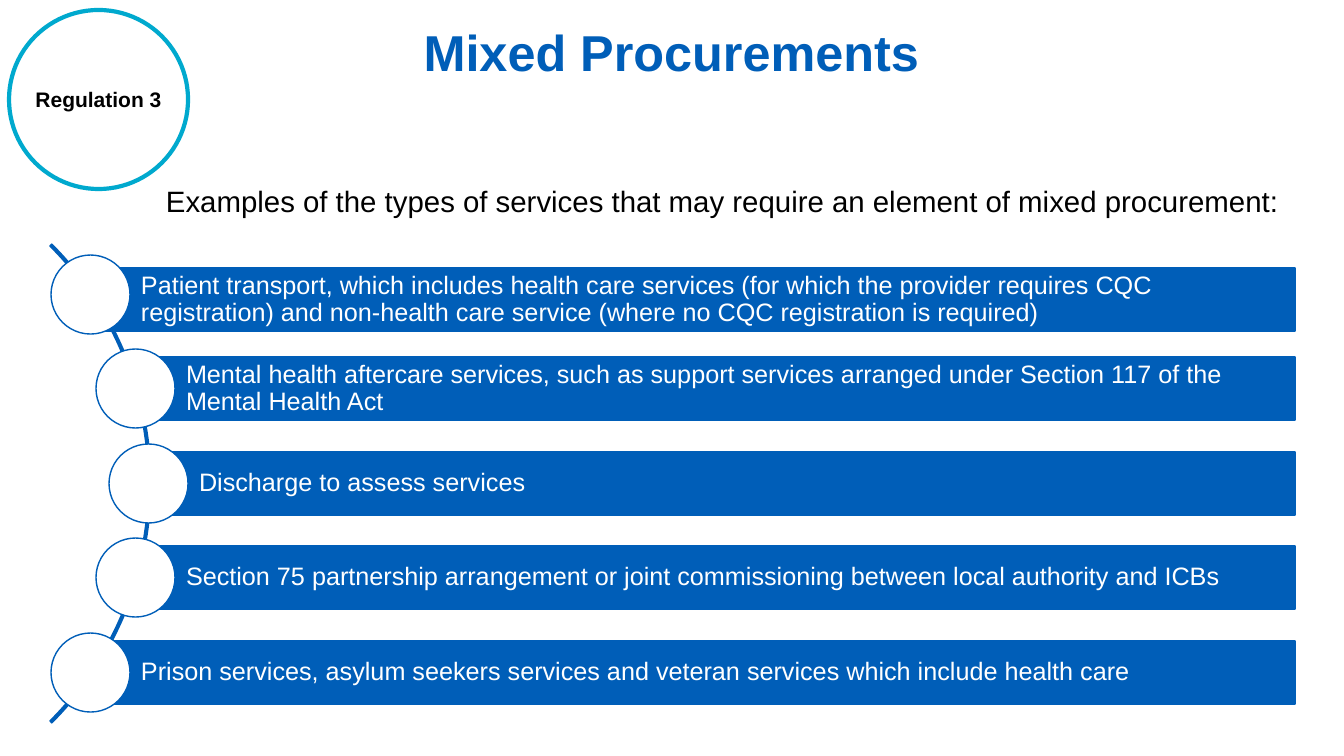
from dataclasses import dataclass

import pptx
import pptx.dml.color
import pptx.enum.shapes
import pptx.enum.text
import pptx.shapes.autoshape
import pptx.slide
import pptx.util

SCALE = 914400 / 100.8
BLUE, TEAL, WHITE, BLACK = "005EB8", "00A9CE", "FFFFFF", "000000"
SHAPES = pptx.enum.shapes.MSO_SHAPE
ALIGN = pptx.enum.text.PP_ALIGN
ANCHOR = pptx.enum.text.MSO_ANCHOR

ROW_PITCH = 94.4
NODE_TOP, NODE_SIZE = 255, 79
BAR_HEIGHT, BAR_RIGHT = 63, 1295


@dataclass
class Box:
    left: int
    top: int
    width: int
    height: int


@dataclass
class Service:
    wording: str
    left: int
    bar_drop: int = 8


SERVICES = [
    Service("Patient transport, which includes health care services (for which the provider "
            "requires CQC registration) and non-health care service (where no CQC registration "
            "is required)", 91, 13),
    Service("Mental health aftercare services, such as support services arranged under "
            "Section 117 of the Mental Health Act", 136),
    Service("Discharge to assess services", 149),
    Service("Section 75 partnership arrangement or joint commissioning between local "
            "authority and ICBs", 136),
    Service("Prison services, asylum seekers services and veteran services which include "
            "health care", 91),
]


def px(length: int) -> pptx.util.Emu:
    return pptx.util.Emu(round(length * SCALE))


def emu(box: Box) -> list[pptx.util.Emu]:
    return [px(length) for length in (box.left, box.top, box.width, box.height)]


def rgb(colour: str) -> pptx.dml.color.RGBColor:
    return pptx.dml.color.RGBColor.from_string(colour)


def add_outline(slide: pptx.slide.Slide, kind: SHAPES, box: Box, fill: str,
                line: str = BLUE, weight: int = 1) -> pptx.shapes.autoshape.Shape:
    outline = slide.shapes.add_shape(kind, *emu(box))
    outline.shadow.inherit = False
    outline.fill.solid()
    outline.fill.fore_color.rgb = rgb(fill)
    outline.line.color.rgb = rgb(line)
    outline.line.width = pptx.util.Pt(weight)
    return outline


def write(holder: pptx.shapes.autoshape.Shape, wording: str, size: int, colour: str,
          bold: bool = False, align: ALIGN = ALIGN.LEFT, anchor: ANCHOR = ANCHOR.MIDDLE,
          wrap: bool = True) -> None:
    frame = holder.text_frame
    frame.word_wrap = wrap
    frame.vertical_anchor = anchor
    paragraph = frame.paragraphs[0]
    paragraph.alignment = align
    run = paragraph.add_run()
    run.text = wording
    run.font.name = "Arial"
    run.font.size = pptx.util.Pt(size)
    run.font.bold = bold
    run.font.color.rgb = rgb(colour)


def add_service(slide: pptx.slide.Slide, service: Service, row: int) -> None:
    top = round(NODE_TOP + row * ROW_PITCH)
    bar = add_outline(slide, SHAPES.RECTANGLE,
                      Box(service.left, top + service.bar_drop,
                          BAR_RIGHT - service.left, BAR_HEIGHT), BLUE)
    write(bar, service.wording, 18, WHITE)
    frame = bar.text_frame
    frame.margin_left = px(50)
    frame.margin_top = frame.margin_right = frame.margin_bottom = px(5)
    frame.paragraphs[0].line_spacing = 0.9
    add_outline(slide, SHAPES.OVAL,
                Box(service.left - NODE_SIZE // 2 - 1, top, NODE_SIZE, NODE_SIZE), WHITE)


def main() -> None:
    deck = pptx.Presentation()
    deck.slide_width, deck.slide_height = px(1344), px(756)
    slide = deck.slides.add_slide(deck.slide_layouts[6])

    title = slide.shapes.add_textbox(*emu(Box(412, 1, 519, 100)))
    write(title, "Mixed Procurements", 36, BLUE, bold=True, align=ALIGN.CENTER)

    regulation = add_outline(slide, SHAPES.OVAL, Box(9, 10, 179, 179), WHITE, TEAL, 3)
    write(regulation, "Regulation 3", 15, BLACK, bold=True, align=ALIGN.CENTER, wrap=False)

    introduction = slide.shapes.add_textbox(*emu(Box(156, 178, 1136, 45)))
    write(introduction, "Examples of the types of services that may require an element of "
          "mixed procurement:", 21, BLACK, anchor=ANCHOR.TOP)

    arc = add_outline(slide, SHAPES.BLOCK_ARC, Box(-526, 145, 677, 677), BLUE)
    for index, adjustment in enumerate((189, 27, 0.004)):
        arc.adjustments[index] = adjustment

    for row, service in enumerate(SERVICES):
        add_service(slide, service, row)

    deck.save("out.pptx")


if __name__ == "__main__":
    main()
